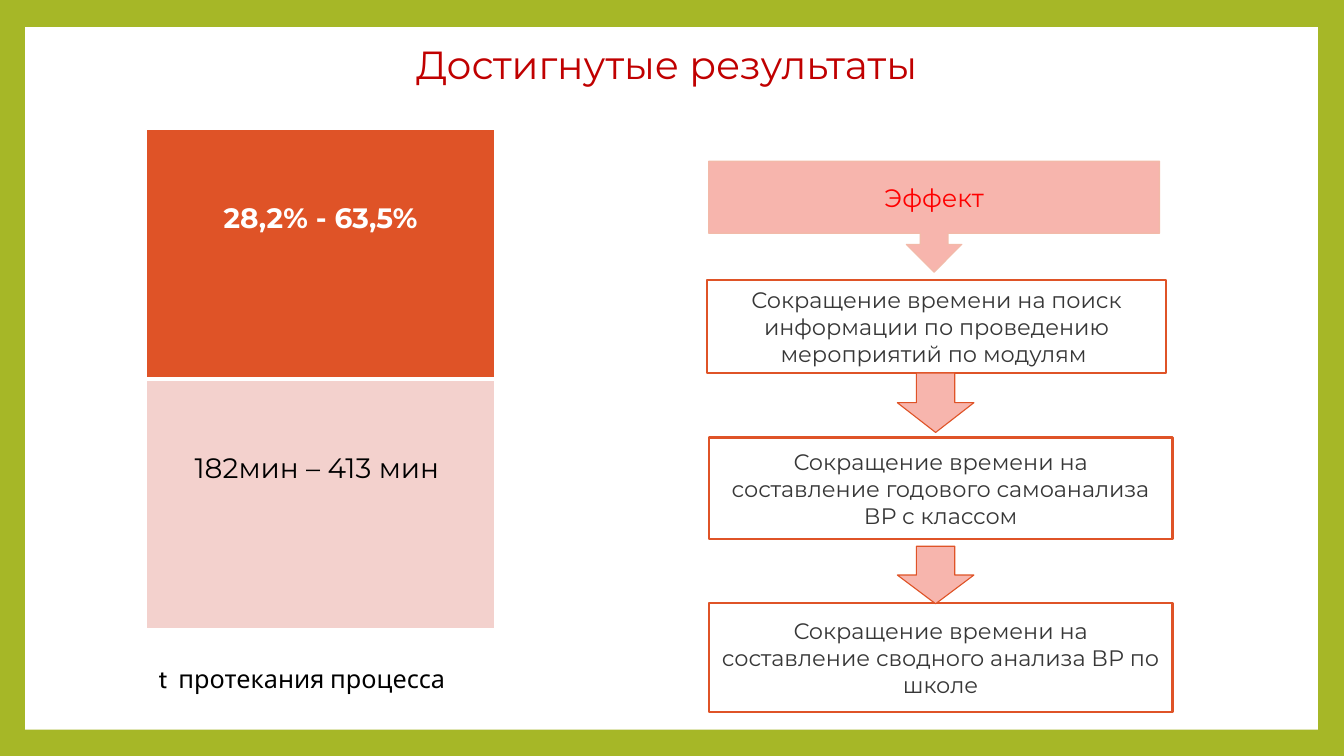
from dataclasses import dataclass

from lxml.etree import SubElement
from pptx import Presentation
from pptx.dml.color import RGBColor
from pptx.enum.shapes import MSO_SHAPE
from pptx.enum.text import MSO_ANCHOR, PP_ALIGN
from pptx.oxml.ns import qn
from pptx.util import Inches, Pt


@dataclass(frozen=True)
class Theme:
    frame: str = "A6B727"
    white: str = "FFFFFF"
    black: str = "000000"
    title: str = "C00000"
    accent: str = "DF5327"
    pale: str = "F3D1CD"
    arrow: str = "F7B5AD"
    callout_line: str = "F2BAA9"
    callout_text: str = "FF0000"
    body_text: str = "373737"
    font: str = "Montserrat"
    caption_font: str = "Cabin"
    title_size: float = 28
    table_size: float = 20
    label_size: float = 18
    body_size: float = 16
    thin_line: float = 0.79
    box_line: float = 1.5


THEME = Theme()


def color(value):
    return RGBColor.from_string(value)


def write_text(text_frame, text, size, text_color, font=THEME.font, bold=False):
    text_frame.text = text
    text_frame.word_wrap = True
    paragraph = text_frame.paragraphs[0]
    paragraph.alignment = PP_ALIGN.CENTER
    run_font = paragraph.runs[0].font
    run_font.name = font
    run_font.size = Pt(size)
    run_font.bold = bold
    run_font.color.rgb = color(text_color)


def add_box(slide, kind, bounds, fill, line=None, line_width=THEME.thin_line):
    shape = slide.shapes.add_shape(kind, *map(Inches, bounds))
    shape.shadow.inherit = False
    shape.fill.solid()
    shape.fill.fore_color.rgb = color(fill)
    if line:
        shape.line.color.rgb = color(line)
        shape.line.width = Pt(line_width)
    else:
        shape.line.fill.background()
    shape.text_frame.vertical_anchor = MSO_ANCHOR.MIDDLE
    return shape


def add_title(slide, text):
    title = slide.shapes.add_textbox(*map(Inches, (3.35, 0.32, 6.52, 0.69)))
    title.text_frame.vertical_anchor = MSO_ANCHOR.MIDDLE
    write_text(title.text_frame, text, THEME.title_size, THEME.title)
    title.text_frame.paragraphs[0].line_spacing = 0.9


def set_cell_borders(cell, bottom_width):
    properties = cell._tc.get_or_add_tcPr()
    widths = {"a:lnL": 1, "a:lnR": 1, "a:lnT": 1, "a:lnB": bottom_width}
    for position, (side, width) in enumerate(widths.items()):
        border = SubElement(properties, qn(side), w=str(Pt(width)))
        fill = SubElement(border, qn("a:solidFill"))
        SubElement(fill, qn("a:srgbClr"), val=THEME.white)
        properties.insert(position, border)


def add_time_table(slide, rows):
    bounds = map(Inches, (1.45, 1.28, 3.46, 2.48 * len(rows)))
    table = slide.shapes.add_table(len(rows), 1, *bounds).table
    for index, (text, fill, text_color, bold, bottom_width) in enumerate(rows):
        cell = table.cell(index, 0)
        cell.fill.solid()
        cell.fill.fore_color.rgb = color(fill)
        cell.margin_top = Inches(0.72)
        write_text(cell.text_frame, text, THEME.table_size, text_color, bold=bold)
        set_cell_borders(cell, bottom_width)


def add_effect_box(slide, bounds, text):
    box = add_box(slide, MSO_SHAPE.RECTANGLE, bounds, THEME.white,
                  THEME.accent, THEME.box_line)
    write_text(box.text_frame, text, THEME.body_size, THEME.body_text)


def main():
    presentation = Presentation()
    presentation.slide_width = Inches(13.33)
    presentation.slide_height = Inches(7.5)
    slide = presentation.slides.add_slide(presentation.slide_layouts[6])

    # Green frame around a white page
    slide.background.fill.solid()
    slide.background.fill.fore_color.rgb = color(THEME.frame)
    add_box(slide, MSO_SHAPE.RECTANGLE, (0.25, 0.27, 12.82, 6.97), THEME.white)
    add_title(slide, "Достигнутые результаты")

    # Time savings with caption
    add_time_table(slide, [
        ("28,2% - 63,5%", THEME.accent, THEME.white, True, 3),
        ("182мин – 413 мин ", THEME.pale, THEME.black, False, 1),
    ])
    caption = add_box(slide, MSO_SHAPE.RECTANGLE, (1.45, 6.52, 3.09, 0.42), THEME.white)
    write_text(caption.text_frame, "t  протекания процесса", THEME.label_size,
               THEME.black, THEME.caption_font)

    # Chain of effects
    callout = add_box(slide, MSO_SHAPE.DOWN_ARROW_CALLOUT, (7.03, 1.6, 4.47, 1.1),
                      THEME.arrow, THEME.callout_line)
    write_text(callout.text_frame, "Эффект", THEME.label_size, THEME.callout_text)
    effects = [
        ((7.01, 2.78, 4.56, 0.92),
         "Сокращение времени на поиск информации по проведению мероприятий по модулям "),
        ((7.03, 4.34, 4.6, 1.01),
         "Сокращение времени на составление годового самоанализа ВР с классом"),
        ((7.03, 5.98, 4.6, 1.08),
         "Сокращение времени на составление сводного анализа ВР по школе"),
    ]
    for bounds, text in effects:
        add_effect_box(slide, bounds, text)
    for top, height in ((3.7, 0.59), (5.42, 0.57)):
        add_box(slide, MSO_SHAPE.DOWN_ARROW, (8.9, top, 0.76, height),
                THEME.arrow, THEME.accent)

    presentation.save("out.pptx")


if __name__ == "__main__":
    main()
